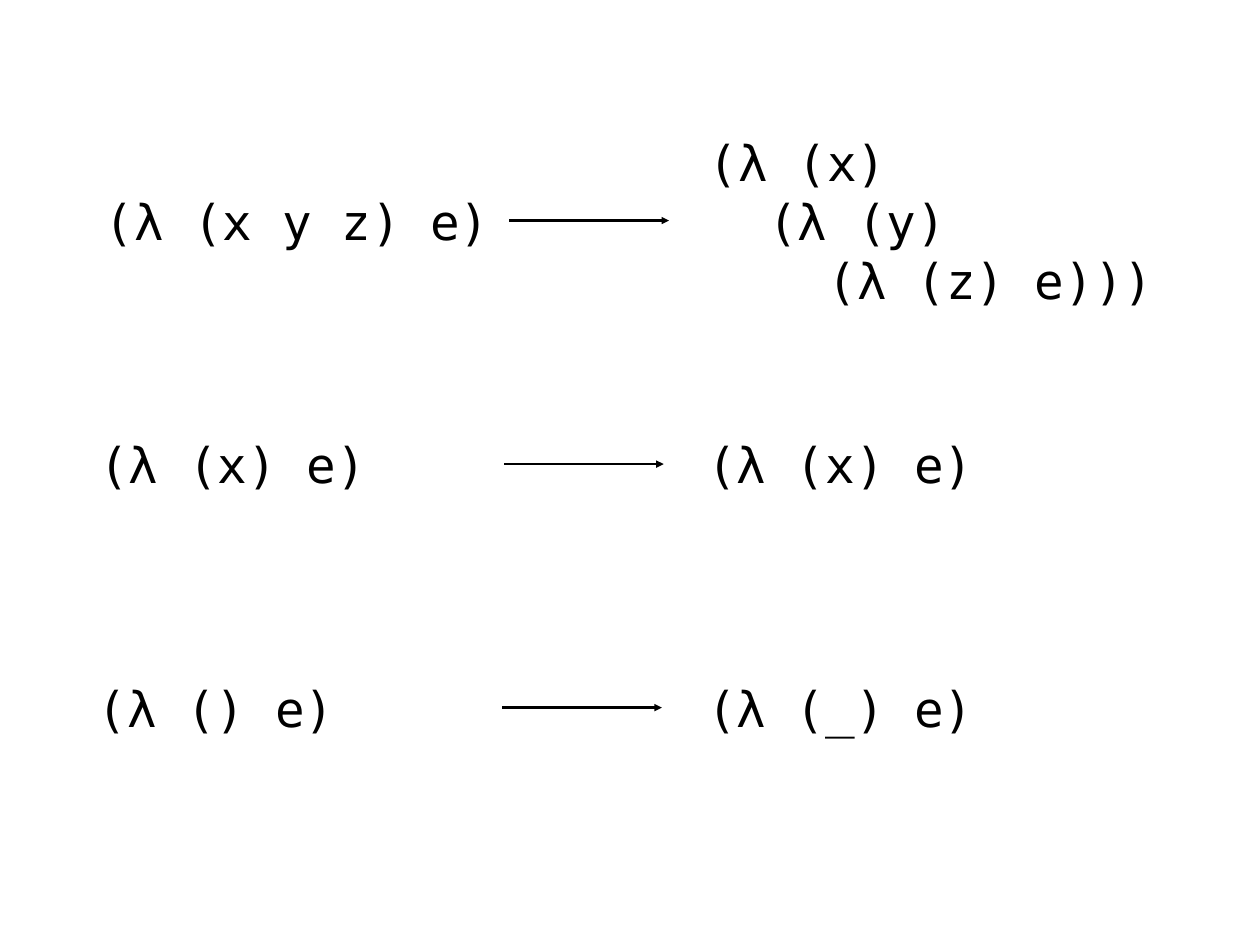
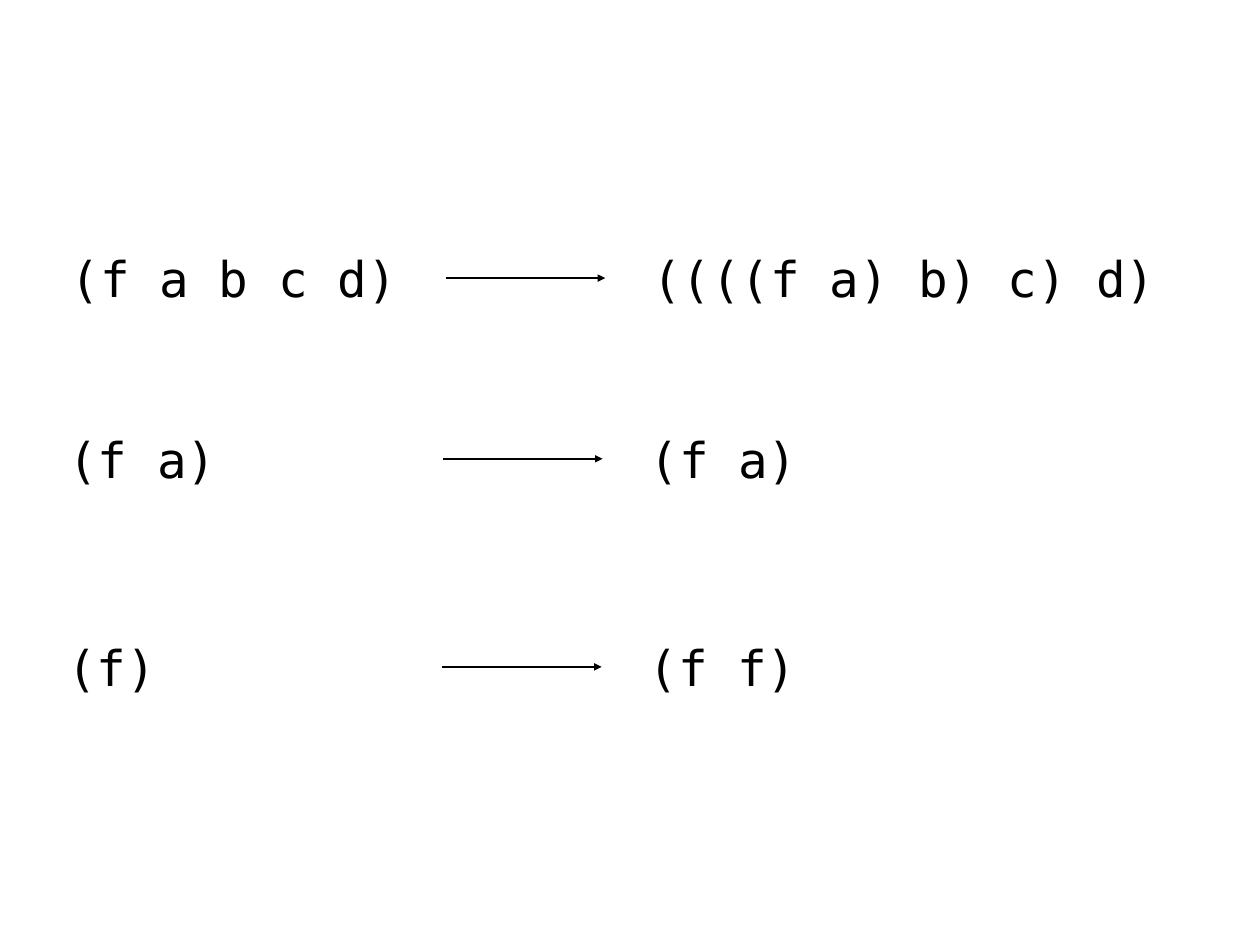
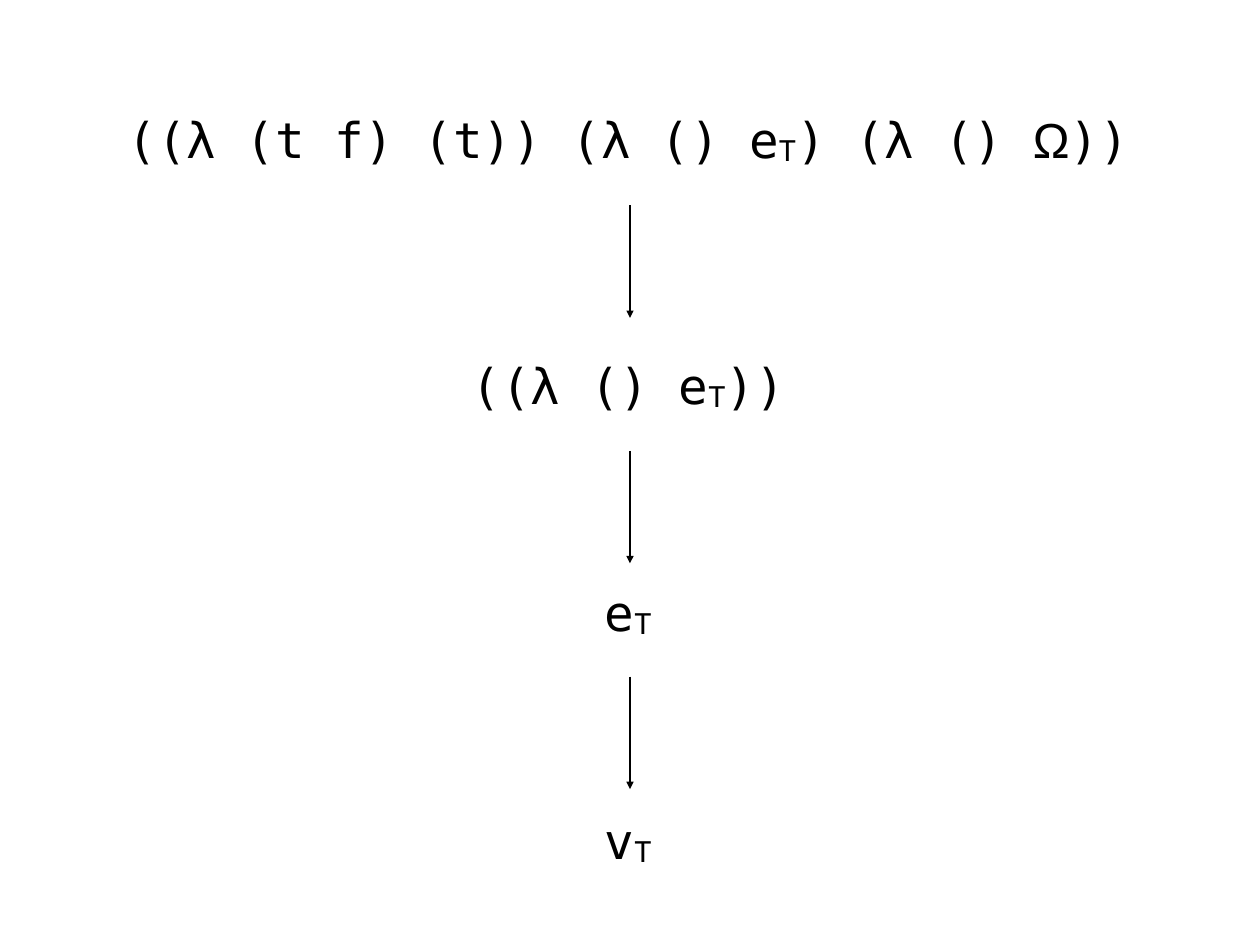
from dataclasses import dataclass

from lxml import etree
from pptx import Presentation
from pptx.dml.color import RGBColor
from pptx.enum.shapes import MSO_CONNECTOR
from pptx.enum.text import MSO_ANCHOR, MSO_AUTO_SIZE, PP_ALIGN
from pptx.oxml.ns import qn
from pptx.util import Inches, Pt


@dataclass(frozen=True)
class Theme:
    ink: RGBColor = RGBColor(0x00, 0x00, 0x00)
    paper: RGBColor = RGBColor(0xFF, 0xFF, 0xFF)
    code_font: str = "DejaVu Sans Mono"
    symbol_font: str = "Arial"
    code_size: int = 40
    line_width: int = 2
    # Measures of the code type, in inches
    inset: float = 0.06
    char_width: float = 0.335
    line_height: float = 0.62
    subscript_base: str = "-6000"


THEME = Theme()
PAGE_WIDTH, PAGE_HEIGHT = 14.22, 10.67
ARROW_CENTER = PAGE_WIDTH / 2
STEP_CENTER = 7.09
RULE_ARROW = 1.8
STEP_ARROW = 1.27
INDENT_CHARS = 2
SUBSCRIPTS = ("T",)
SYMBOLS = ("Ω",)


# Elements
def add_page(deck):
    page = deck.slides.add_slide(deck.slide_layouts[6])
    page.background.fill.solid()
    page.background.fill.fore_color.rgb = THEME.paper
    return page


def format_span(span):
    font = span.font
    font.name = THEME.symbol_font if span.text in SYMBOLS else THEME.code_font
    font.size = Pt(THEME.code_size)
    font.color.rgb = THEME.ink
    if span.text in SUBSCRIPTS:
        span._r.get_or_add_rPr().set("baseline", THEME.subscript_base)


def add_code(page, lines, left, middle, width, align=PP_ALIGN.LEFT):
    """Place code centred on a height; each line is (indent level, spans)."""
    height = len(lines) * THEME.line_height + 2 * THEME.inset
    box = page.shapes.add_textbox(Inches(left), Inches(middle - height / 2),
                                  Inches(width), Inches(height))
    frame = box.text_frame
    frame.word_wrap = False
    frame.auto_size = MSO_AUTO_SIZE.SHAPE_TO_FIT_TEXT
    frame.vertical_anchor = MSO_ANCHOR.MIDDLE
    frame.margin_left = frame.margin_right = Inches(THEME.inset)
    frame.margin_top = frame.margin_bottom = Inches(THEME.inset)
    for index, (level, spans) in enumerate(lines):
        para = frame.add_paragraph() if index else frame.paragraphs[0]
        para.alignment = align
        if level:
            indent = Inches(level * INDENT_CHARS * THEME.char_width)
            para._p.get_or_add_pPr().set("marL", str(indent))
        for text in spans:
            span = para.add_run()
            span.text = text
            format_span(span)


def add_arrow(page, x, y, across=0, down=0):
    arrow = page.shapes.add_connector(
        MSO_CONNECTOR.STRAIGHT, Inches(x), Inches(y),
        Inches(x + across), Inches(y + down))
    arrow.line.color.rgb = THEME.ink
    arrow.line.width = Pt(THEME.line_width)
    etree.SubElement(arrow.line._get_or_add_ln(), qn("a:tailEnd"), type="triangle")
    etree.SubElement(arrow._element.spPr, qn("a:effectLst"))


def add_nested_code(page, texts, left, middle):
    """Each line is indented one level deeper than the line before."""
    # The box is a little wider than its longest line, so that no line breaks
    slack = 0.02
    chars = max(level * INDENT_CHARS + len(text) for level, text in enumerate(texts))
    lines = [(level, [text]) for level, text in enumerate(texts)]
    width = chars * THEME.char_width + 2 * THEME.inset + slack
    add_code(page, lines, left - slack / 2, middle, width)


# Slides
def add_rules_page(deck, arrow_offset, rules):
    """Rewriting rules: source code, arrow, resulting code."""
    page = add_page(deck)
    for middle, left, source, result_left, result in rules:
        add_nested_code(page, [source], left, middle)
        add_arrow(page, left + arrow_offset, middle, across=RULE_ARROW)
        add_nested_code(page, result, result_left, middle)


def add_steps_page(deck, steps, arrow_tops):
    """Evaluation steps running down the middle of the page."""
    page = add_page(deck)
    for middle, width, spans in steps:
        add_code(page, [(0, spans)], STEP_CENTER - width / 2, middle, width,
                 PP_ALIGN.CENTER)
    for top in arrow_tops:
        add_arrow(page, ARROW_CENTER, top, down=STEP_ARROW)


def main():
    deck = Presentation()
    deck.slide_width, deck.slide_height = Inches(PAGE_WIDTH), Inches(PAGE_HEIGHT)

    # Functions of any number of arguments
    add_rules_page(deck, 4.62, [
        (2.49, 1.13, "(λ (x y z) e)", 7.95, ["(λ (x)", "(λ (y)", "(λ (z) e)))"]),
        (5.24, 1.07, "(λ (x) e)", 7.93, ["(λ (x) e)"]),
        (7.99, 1.05, "(λ () e)", 7.93, ["(λ (_) e)"]),
    ])

    # Calls with any number of arguments
    add_rules_page(deck, 4.28, [
        (3.14, 0.75, "(f a b c d)", 7.31, ["((((f a) b) c) d)"]),
        (5.18, 0.72, "(f a)", 7.28, ["(f a)"]),
        (7.53, 0.71, "(f)", 7.27, ["(f f)"]),
    ])

    # Evaluation of a true condition
    add_steps_page(deck, [
        (1.57, 11.45, ["((λ (t f) (t)) (λ () e", "T", ") (λ () ", "Ω", "))"]),
        (4.35, 3.68, ["((λ () e", "T", "))"]),
        (6.91, 0.68, ["e", "T"]),
        (9.48, 0.68, ["v", "T"]),
    ], arrow_tops=[2.32, 5.09, 7.64])

    deck.save("out.pptx")


if __name__ == "__main__":
    main()
